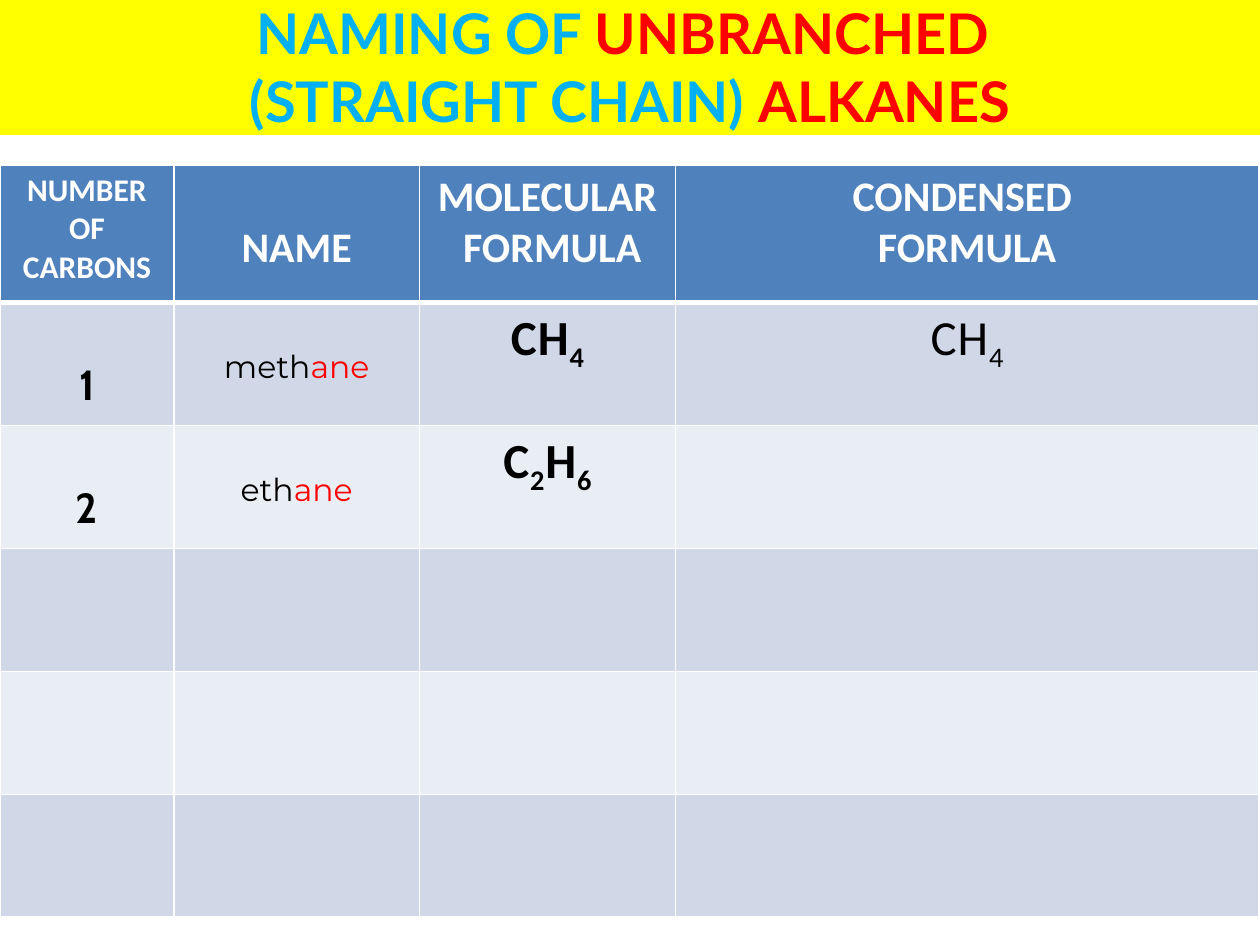
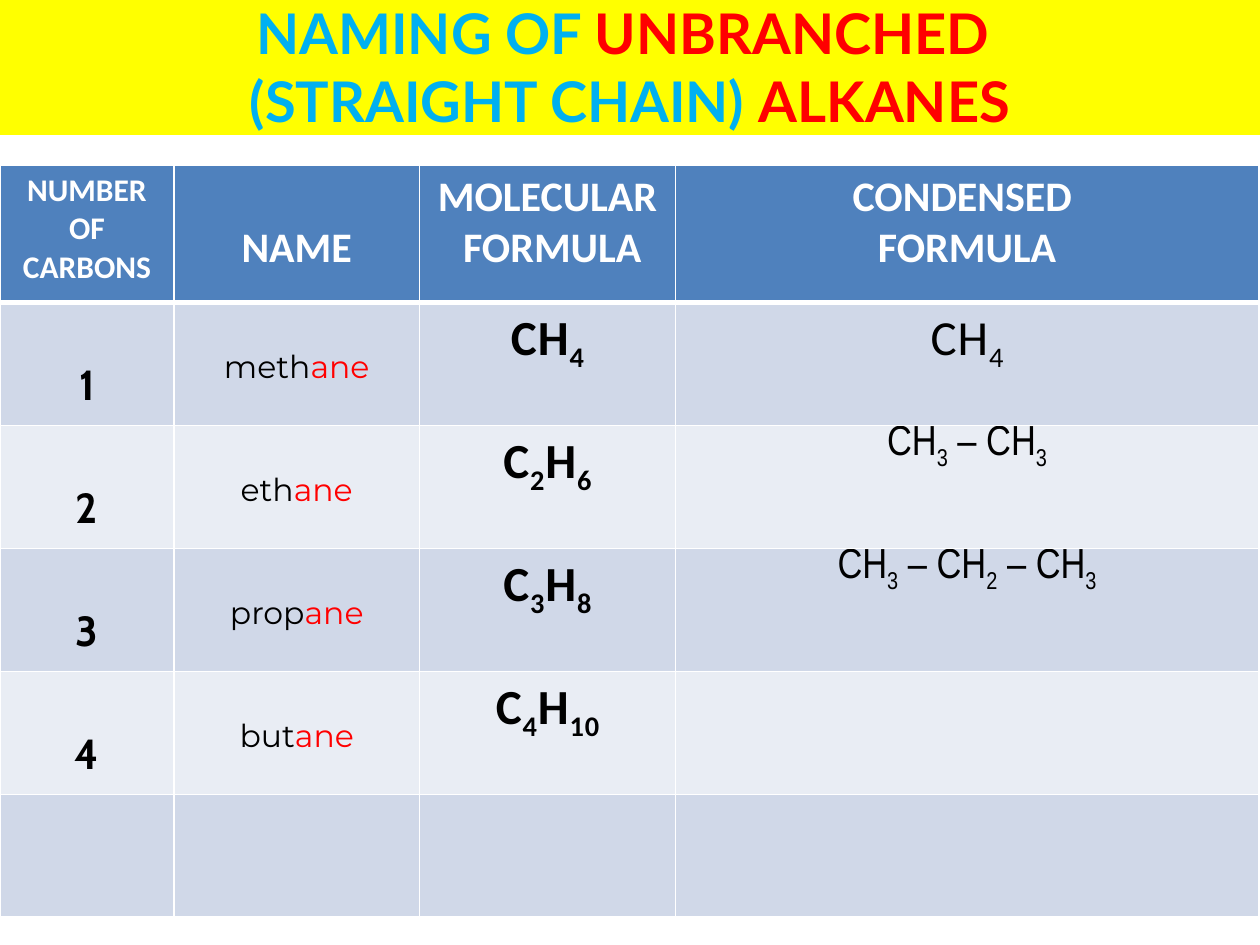
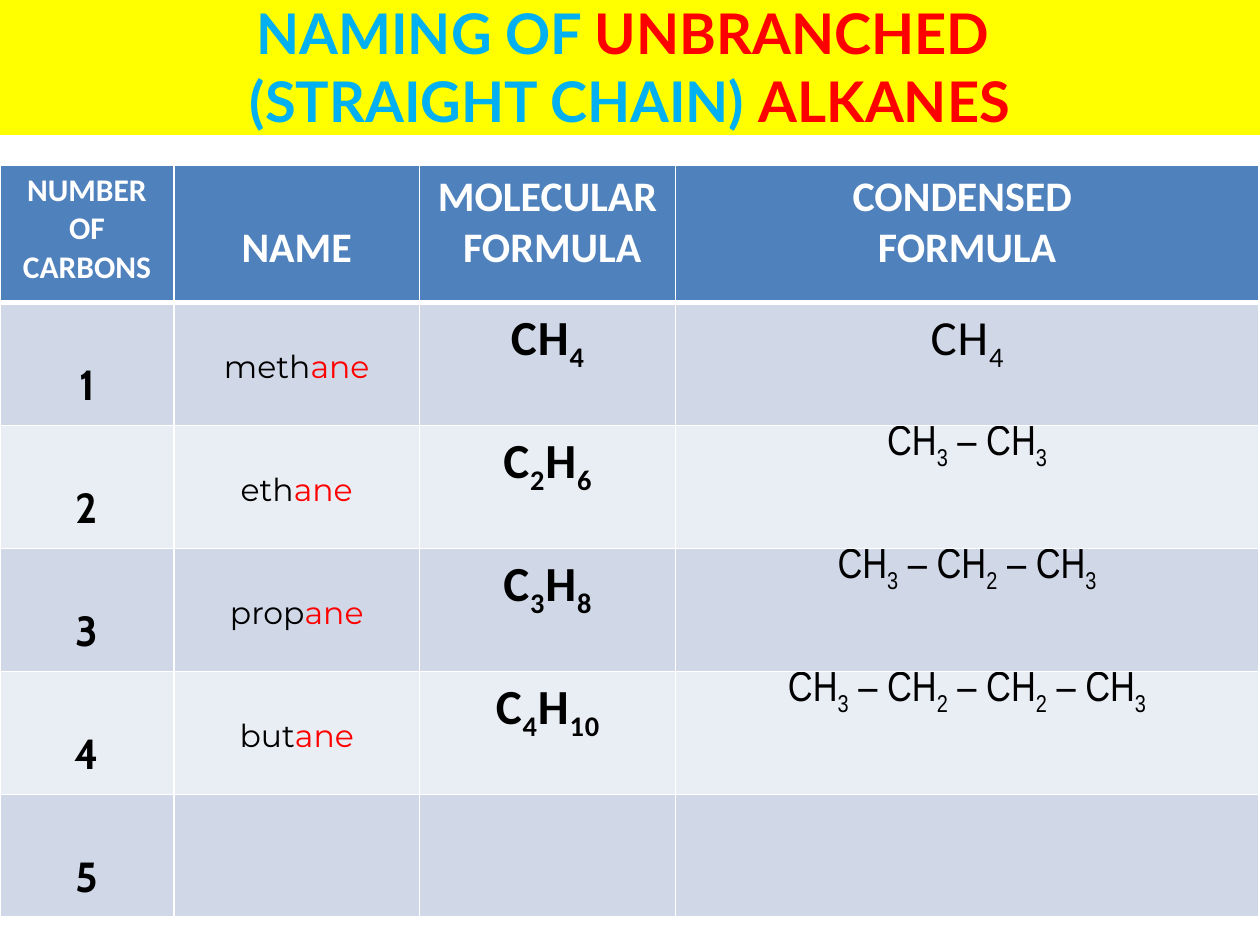
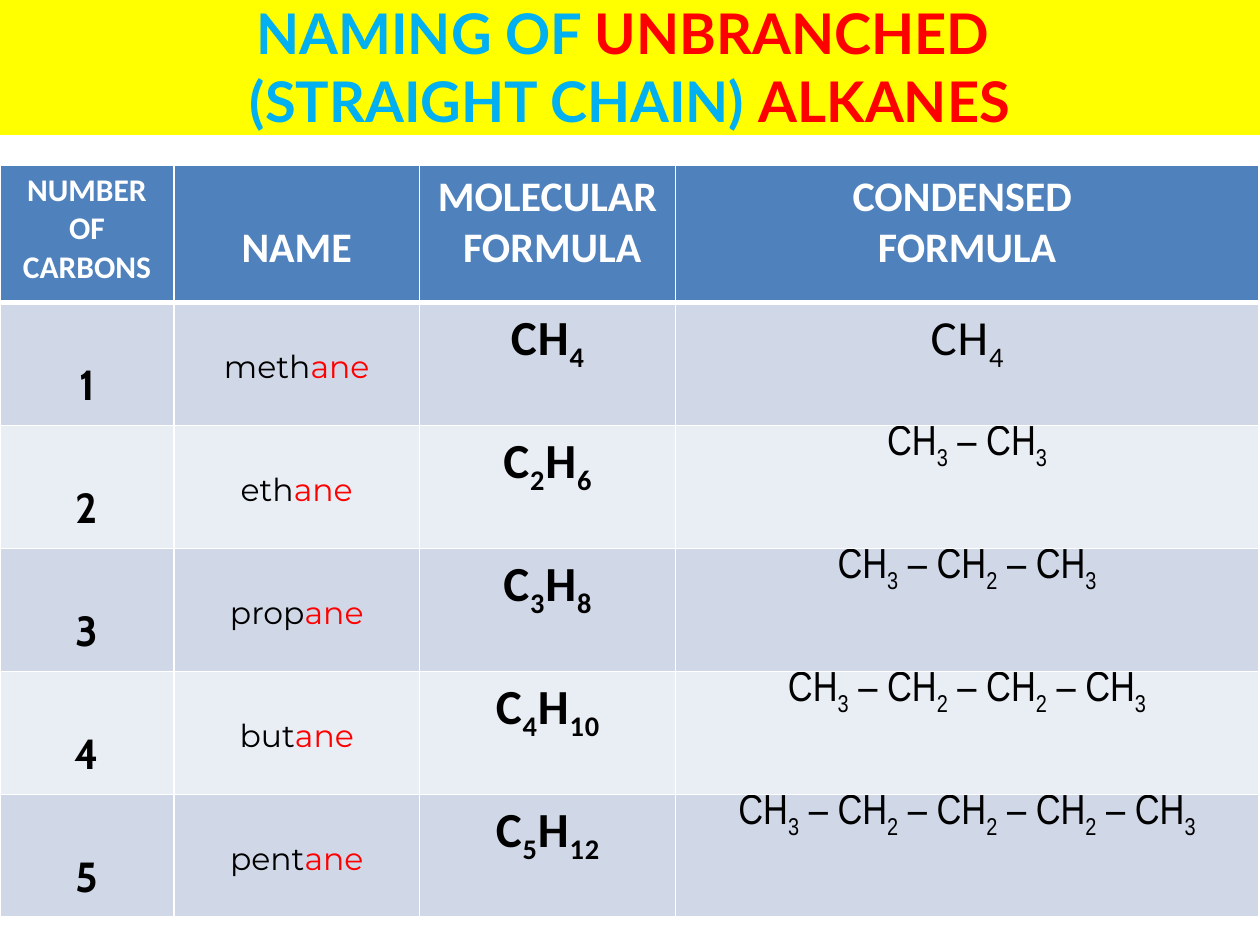
import itertools

import pptx
import pptx.dml.color
import pptx.enum.text
import pptx.oxml
import pptx.oxml.ns
import pptx.util
from pptx.util import Inches

WHITE, BLACK, RED = "FFFFFF", "000000", "FF0000"
YELLOW, SKY = "FFFF00", "00B0F0"
HEADER_FILL, BANDS = "4F81BD", ("D0D8E8", "E9EDF4")

TITLE_BOX = (0, -0.02, 10, 1.09)
TABLE_BOX = (0, 1.31, 10, 5.97)
COLUMN_WIDTHS = (1.38, 1.95, 2.03, 4.63)
HEADER_HEIGHT = 1.09
CELL_MARGIN = 0.05

HEADERS = (
    (18, CELL_MARGIN, ("NUMBER OF CARBONS",)),
    (24, 0.46, ("NAME",)),
    (24, CELL_MARGIN, ("MOLECULAR", " FORMULA")),
    (24, CELL_MARGIN, ("CONDENSED ", "FORMULA")),
)
STEMS = ("meth", "eth", "prop", "but", "pent")
FILLED_ROWS = ((2, 2, 2, 1), (4, 4, 4, 3), (5, 4, 4, 4), (5, 5, 5, 5))


def paint(target, color):
    """Give a fill or a font one solid hex colour."""
    if hasattr(target, "solid"):
        target.solid()
        target = target.fore_color
    else:
        target = target.color
    target.rgb = pptx.dml.color.RGBColor.from_string(color)


def add_span(para, text, size, face, color=BLACK, bold=False):
    """Add one formatted run to a paragraph."""
    span = para.add_run()
    span.text = text
    span.font.size = pptx.util.Pt(size)
    span.font.name = face
    span.font.bold = bold
    paint(span.font, color)
    return span


def add_formula(para, formula, size, face, bold=False, spacing=0):
    """Write a chemical formula with its digits as subscripts."""
    for is_digit, letters in itertools.groupby(formula, str.isdigit):
        span = add_span(para, "".join(letters), size, face, bold=bold)
        properties = span.font._element
        if spacing:
            properties.set("spc", str(spacing))
        if is_digit:
            properties.set("baseline", "-25000")


def molecular_formula(carbons):
    """Return the molecular formula of an alkane."""
    count = carbons if carbons > 1 else ""
    return f"C{count}H{2 * carbons + 2}"


def condensed_formula(carbons):
    """Return the condensed formula of a straight-chain alkane."""
    if carbons == 1:
        return "CH4"
    return " – ".join(["CH3"] + ["CH2"] * (carbons - 2) + ["CH3"])


def style_cell(cell, fill, top_width=1, bottom_width=1):
    """Set the white borders and the fill of a cell."""
    properties = cell._tc.get_or_add_tcPr()
    widths = {"lnL": 1, "lnR": 1, "lnT": top_width, "lnB": bottom_width}
    for side, width in widths.items():
        properties.append(pptx.oxml.parse_xml(
            f'<a:{side} {pptx.oxml.ns.nsdecls("a")} w="{pptx.util.Pt(width)}">'
            f'<a:solidFill><a:srgbClr val="{WHITE}"/></a:solidFill></a:{side}>'))
    paint(cell.fill, fill)


def start_text(cell, margin_top):
    """Set the top margin of a cell and return its centred paragraph."""
    cell.margin_top = Inches(margin_top)
    para = cell.text_frame.paragraphs[0]
    para.alignment = pptx.enum.text.PP_ALIGN.CENTER
    return para


def fill_header(cell, size, margin_top, lines):
    """Write a column heading, one paragraph a line."""
    style_cell(cell, HEADER_FILL, bottom_width=3)
    para = start_text(cell, margin_top)
    for index, line in enumerate(lines):
        if index:
            para = cell.text_frame.add_paragraph()
            para.alignment = pptx.enum.text.PP_ALIGN.CENTER
        add_span(para, line, size, "Calibri", WHITE, True)


def fill_number(cell, carbons):
    """Write the number of carbons."""
    add_span(start_text(cell, 0.46), str(carbons), 24, "Cabin", bold=True)


def fill_name(cell, carbons):
    """Write the alkane's name with its ending in red."""
    para = start_text(cell, 0.36)
    add_span(para, STEMS[carbons - 1], 18, "Montserrat")
    add_span(para, "ane", 18, "Montserrat", RED)


def fill_molecular(cell, carbons):
    """Write the molecular formula in bold."""
    para = start_text(cell, CELL_MARGIN)
    add_formula(para, molecular_formula(carbons), 28, "Calibri", True, 50)


def fill_condensed(cell, carbons):
    """Write the condensed formula, larger for the single carbon."""
    formula = condensed_formula(carbons)
    if carbons == 1:
        add_formula(start_text(cell, CELL_MARGIN), formula, 28, "Calibri", spacing=50)
    else:
        add_formula(start_text(cell, 0), formula, 24, "Arial Narrow")


def add_title(page, box):
    """Format the title placeholder as the yellow band."""
    title = page.shapes.title
    title.left, title.top, title.width, title.height = map(Inches, box)
    paint(title.fill, YELLOW)
    frame = title.text_frame
    frame.word_wrap = True
    frame.auto_size = pptx.enum.text.MSO_AUTO_SIZE.NONE
    frame.vertical_anchor = pptx.enum.text.MSO_ANCHOR.MIDDLE
    para = frame.paragraphs[0]
    para.alignment = pptx.enum.text.PP_ALIGN.CENTER
    add_span(para, "NAMING OF ", 32, "Lato", SKY, True)
    add_span(para, "UNBRANCHED ", 32, "Lato", RED, True)
    para.add_line_break()
    add_span(para, "(STRAIGHT CHAIN) ", 32, "Lato", SKY, True)
    add_span(para, "ALKANES", 32, "Lato", RED, True)


def add_alkane_table(page, box, filled_rows):
    """Add the alkane table with each column filled to its given row."""
    height = box[3]
    table = page.shapes.add_table(
        len(STEMS) + 1, len(COLUMN_WIDTHS), *map(Inches, box)).table
    for column, width in zip(table.columns, COLUMN_WIDTHS):
        column.width = Inches(width)
    for row in table.rows:
        row.height = Inches((height - HEADER_HEIGHT) / len(STEMS))
    table.rows[0].height = Inches(HEADER_HEIGHT)

    for column, header in enumerate(HEADERS):
        fill_header(table.cell(0, column), *header)
    writers = (fill_number, fill_name, fill_molecular, fill_condensed)
    for carbons in range(1, len(STEMS) + 1):
        for column, (write, filled) in enumerate(zip(writers, filled_rows)):
            cell = table.cell(carbons, column)
            style_cell(cell, BANDS[(carbons - 1) % 2], 3 if carbons == 1 else 1)
            if carbons <= filled:
                write(cell, carbons)


def main():
    """Build the four steps of the naming table."""
    deck = pptx.Presentation()
    deck.slide_width, deck.slide_height = Inches(10), Inches(7.5)
    for filled_rows in FILLED_ROWS:
        page = deck.slides.add_slide(deck.slide_layouts.get_by_name("Title Only"))
        add_title(page, TITLE_BOX)
        add_alkane_table(page, TABLE_BOX, filled_rows)
    deck.save("out.pptx")


if __name__ == "__main__":
    main()
